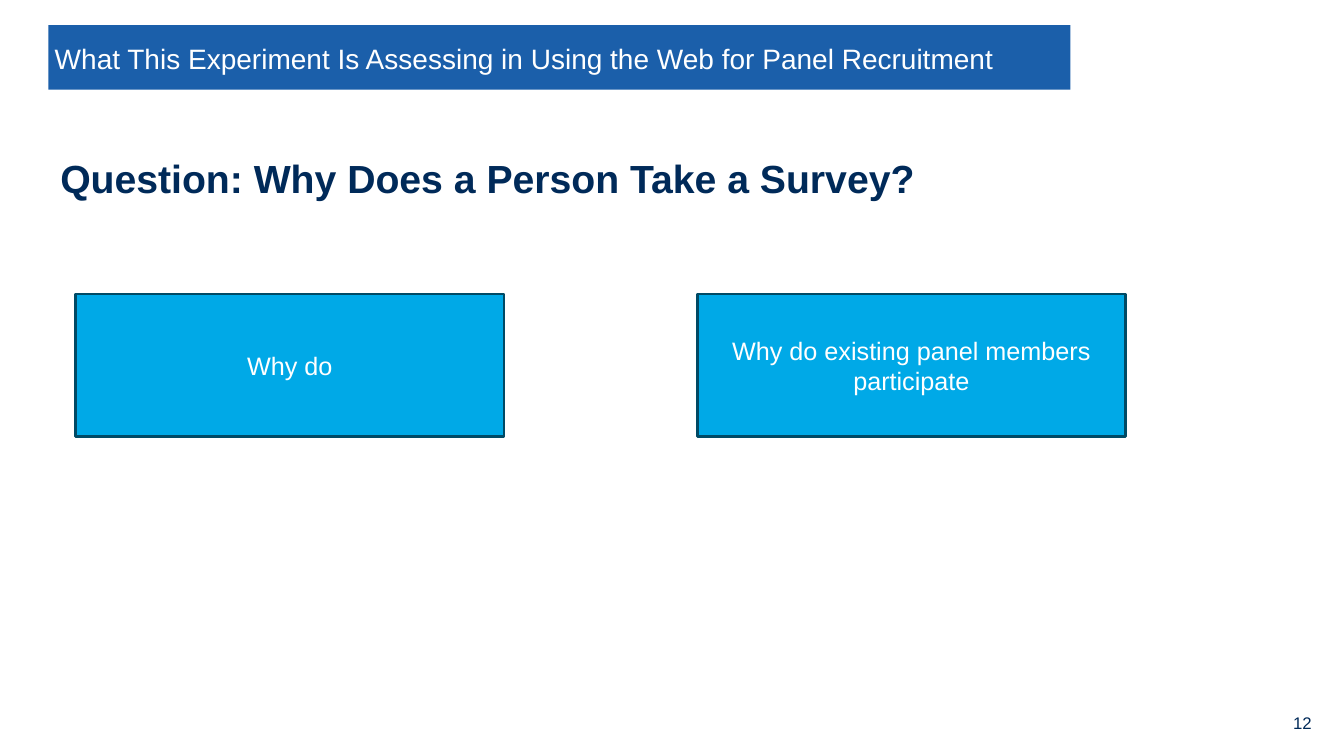
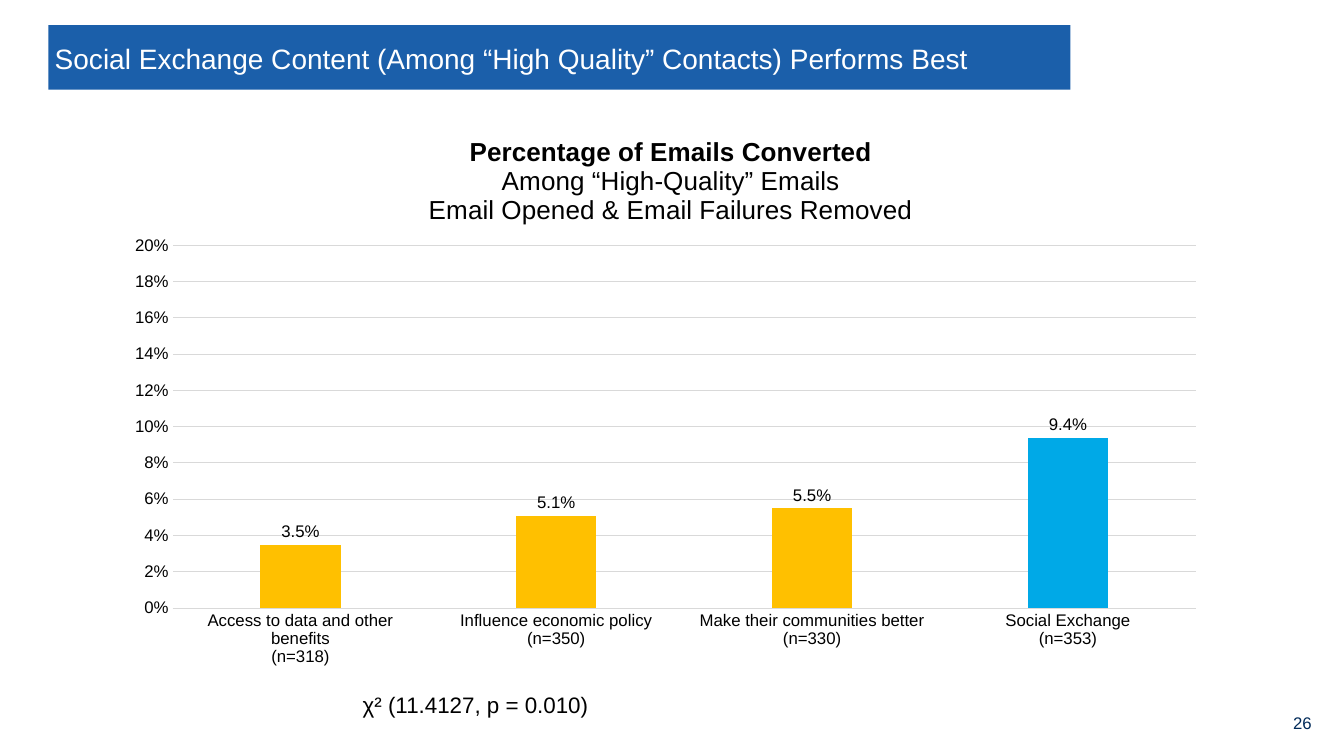
from dataclasses import dataclass
from lxml.etree import SubElement as Sub
from pptx import Presentation
from pptx.chart.data import CategoryChartData as Data
from pptx.dml.color import RGBColor as Rgb
from pptx.enum.chart import XL_CHART_TYPE as Kind, XL_LABEL_POSITION as Spot, XL_TICK_MARK as Tick
from pptx.enum.shapes import MSO_SHAPE as Form
from pptx.enum.text import MSO_ANCHOR as Anchor, PP_ALIGN as Align
from pptx.oxml.ns import qn
from pptx.util import Pt


@dataclass(frozen=True)
class Theme:
    face: str = "Arial"
    band: str = "1B5FAA"
    navy: str = "002A59"
    cyan: str = "00A9E7"
    edge: str = "004A65"
    gold: str = "FFC000"
    grid: str = "D9D9D9"
    white: str = "FFFFFF"
    black: str = "000000"
    small: float = 12
    note: float = 16
    body: float = 18
    chart: float = 18.6
    title: float = 20
    head: float = 28


T = Theme()


def color(code):
    return Rgb.from_string(code)


def style(font, size, code, bold=False):
    font.name = T.face
    font.size = Pt(size)
    font.bold = bold
    font.color.rgb = color(code)


def write(frame, text, size, code, bold=False, align=Align.LEFT, anchor=Anchor.MIDDLE):
    frame.word_wrap = True
    frame.vertical_anchor = anchor
    para = frame.paragraphs[0]
    para.alignment = align
    run = para.add_run()
    run.text = text
    style(run.font, size, code, bold)
    return para


def label(slide, box, *args, **opts):
    frame = slide.shapes.add_textbox(*map(Pt, box)).text_frame
    return write(frame, *args, **opts)


def block(slide, box, fill, edge=None):
    shape = slide.shapes.add_shape(Form.RECTANGLE, *map(Pt, box))
    shape.shadow.inherit = False
    shape.fill.solid()
    shape.fill.fore_color.rgb = color(fill)
    if edge:
        shape.line.color.rgb = color(edge)
        shape.line.width = Pt(2)
    else:
        shape.line.fill.background()
    return shape


def start(deck, title, page):
    slide = deck.slides.add_slide(deck.slide_layouts[6])
    block(slide, (34.5, 18, 730, 46), T.band)
    label(slide, (32, 18, 733, 47.5), title, T.title, T.white)
    label(slide, (895.5, 504, 48.5, 24), page, T.small, T.navy, align=Align.RIGHT)
    return slide


def cards(slide, box, gap, texts):
    left, top, width, height = box
    wide = (width - gap * (len(texts) - 1)) / len(texts)
    for i, text in enumerate(texts):
        card = block(slide, (left + i * (wide + gap), top, wide, height), T.cyan, T.edge)
        write(card.text_frame, text, T.body, T.white, align=Align.CENTER)


def place(node, **parts):
    layout = node.find(qn("c:layout"))
    if layout is None:
        layout = Sub(node, qn("c:layout"))
        node.remove(layout)
        after = node.find(qn("c:tx"))
        node.insert(0 if after is None else node.index(after) + 1, layout)
    for child in list(layout):
        layout.remove(child)
    manual = Sub(layout, qn("c:manualLayout"))
    for key, val in parts.items():
        Sub(manual, qn("c:" + key)).set("val", str(val))


def rule(line):
    line.color.rgb = color(T.grid)
    line.width = Pt(0.75)


def heading(chart, lines):
    frame = chart.chart_title.text_frame
    for i, text in enumerate(lines):
        para = frame.paragraphs[0] if i == 0 else frame.add_paragraph()
        para.alignment = Align.CENTER
        run = para.add_run()
        run.text = text
        style(run.font, T.chart, T.black, i == 0)
    chart.chart_title.include_in_layout = False
    root = chart.chart_title._element
    place(root, xMode="edge", yMode="edge", x=0.28, y=0.04)


def axes(chart):
    for axis in (chart.category_axis, chart.value_axis):
        axis.major_tick_mark = axis.minor_tick_mark = Tick.NONE
        style(axis.tick_labels.font, T.small, T.black)
    rule(chart.category_axis.format.line)
    scale = chart.value_axis
    scale.minimum_scale, scale.maximum_scale, scale.major_unit = 0, 0.2, 0.02
    scale.tick_labels.number_format = "0%"
    scale.tick_labels.number_format_is_linked = False
    scale.format.line.fill.background()
    rule(scale.major_gridlines.format.line)


def columns(slide, box, lines, rows, best):
    data = Data(number_format="0.0%")
    data.categories = [name for name, _ in rows]
    data.add_series("Series 1", [val for _, val in rows])
    chart = slide.shapes.add_chart(Kind.COLUMN_CLUSTERED, *map(Pt, box), data).chart
    chart.has_legend = False
    style(chart.font, 10, T.navy)
    heading(chart, lines)
    axes(chart)
    plot = chart.plots[0]
    plot.vary_by_categories = False
    plot.gap_width, plot.overlap = 219, -27
    bars = plot.series[0]
    for fill, code in ((bars.format.fill, T.gold), (bars.points[best].format.fill, T.cyan)):
        fill.solid()
        fill.fore_color.rgb = color(code)
    tags = bars.data_labels
    tags.show_value = True
    tags.position = Spot.OUTSIDE_END
    tags.number_format = "0.0%"
    tags.number_format_is_linked = False
    style(tags.font, T.small, T.black)
    area = chart._chartSpace.chart.plotArea
    place(area, layoutTarget="inner", xMode="edge", yMode="edge", x=0.05, y=0.24, w=0.93, h=0.64)


def question(deck):
    slide = start(deck, "What This Experiment Is Assessing in Using the Web for Panel Recruitment", "12")
    para = label(slide, (36, 100, 876, 386), "Question: Why Does a Person Take a Survey?",
                 T.head, T.navy, bold=True, anchor=Anchor.TOP)
    para.line_spacing = 1.2
    para.space_after = Pt(6)
    cards(slide, (54, 210, 750, 102), 138,
          ("Why do", "Why do existing panel members participate"))


def results(deck):
    slide = start(deck, "Social Exchange Content (Among “High Quality” Contacts) Performs Best", "26")
    lines = ("Percentage of Emails Converted", "Among “High-Quality” Emails",
             "Email Opened & Email Failures Removed")
    rows = (("Access to data and other benefits\n(n=318)", 0.035),
            ("Influence economic policy\n(n=350)", 0.051),
            ("Make their communities better\n(n=330)", 0.055),
            ("Social Exchange\n(n=353)", 0.094))
    columns(slide, (84, 78, 786, 405), lines, rows, 3)
    label(slide, (252, 490, 600, 27), "χ² (11.4127, p = 0.010)", T.note, T.black)


def main():
    deck = Presentation()
    deck.slide_width, deck.slide_height = Pt(960), Pt(540)
    question(deck)
    results(deck)
    deck.save("out.pptx")


if __name__ == "__main__":
    main()
